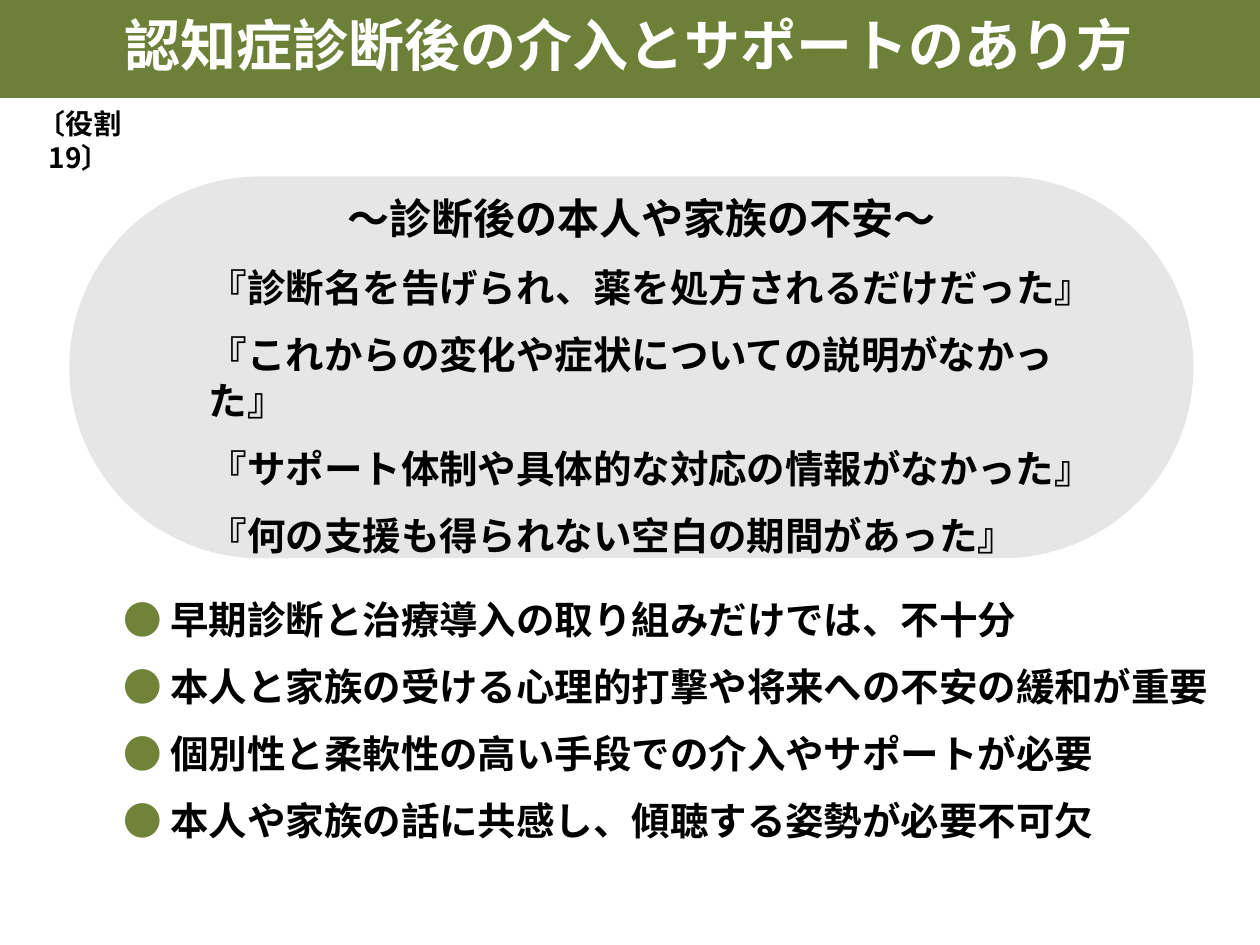
"""Build a slide on support after a dementia diagnosis."""
from dataclasses import dataclass

from lxml import etree
from pptx import Presentation
from pptx import util as u
from pptx.dml import color
from pptx.enum import shapes, text
from pptx.oxml import ns

FACE = "Noto Sans CJK JP"
BLACK, WHITE, GREEN, DOT, GREY = "000000", "FFFFFF", "6D8038", "708339", "E6E6E6"
MID, LEFT = text.PP_ALIGN.CENTER, text.PP_ALIGN.LEFT


@dataclass
class Box:
    """Place and size in points."""
    left: float
    top: float
    width: float
    height: float

    def emu(self) -> list:
        """Give the four lengths in slide units."""
        return [u.Pt(n) for n in (self.left, self.top, self.width, self.height)]


@dataclass
class Line:
    """One paragraph, with an optional coloured lead mark."""
    words: str
    size: float
    tint: str = BLACK
    align: text.PP_ALIGN = LEFT
    before: float = 0
    margin: float = 0
    indent: float = 0
    mark: str = ""


def paint(target, tint: str) -> None:
    """Set a solid colour on a fill or a font."""
    fill = getattr(target, "fill", target)
    fill.solid()
    fill.fore_color.rgb = color.RGBColor.from_string(tint)


def add_panel(slide, kind, box: Box, tint: str):
    """Draw a plain filled shape."""
    panel = slide.shapes.add_shape(kind, *box.emu())
    panel.shadow.inherit = False
    paint(panel, tint)
    panel.line.fill.background()
    return panel


def write(para, line: Line) -> None:
    """Fill one paragraph and set its font and spacing."""
    para.alignment = line.align
    para.space_before = u.Pt(line.before)
    font = para.font
    font.size, font.bold, font.name = u.Pt(line.size), True, FACE
    paint(font, line.tint)
    props = para._p.get_or_add_pPr()
    props.set("marL", str(u.Pt(line.margin)))
    props.set("indent", str(u.Pt(line.indent)))
    latin = props.find(".//" + ns.qn("a:latin"))
    east = etree.Element(ns.qn("a:ea"), typeface=FACE)
    latin.addnext(east)
    if line.mark:
        lead = para.add_run()
        lead.text = line.mark
        paint(lead.font, DOT)
    para.add_run().text = line.words


def add_text(slide, box: Box, lines: list[Line], grow: bool = True) -> None:
    """Add a wrapped text box, growing or centred on its height."""
    frame = slide.shapes.add_textbox(*box.emu()).text_frame
    frame.word_wrap = True
    if grow:
        frame.auto_size = text.MSO_AUTO_SIZE.SHAPE_TO_FIT_TEXT
    else:
        frame.vertical_anchor = text.MSO_ANCHOR.MIDDLE
    for spot, line in enumerate(lines):
        write(frame.add_paragraph() if spot else frame.paragraphs[0], line)


def main() -> None:
    """Build and save the slide."""
    deck = Presentation()
    deck.slide_width, deck.slide_height = u.Pt(720), u.Pt(540)
    slide = deck.slides.add_slide(deck.slide_layouts[6])

    points = [
        "早期診断と治療導入の取り組みだけでは、不十分",
        "本人と家族の受ける心理的打撃や将来への不安の緩和が重要",
        "個別性と柔軟性の高い手段での介入やサポートが必要",
        "本人や家族の話に共感し、傾聴する姿勢が必要不可欠",
    ]
    fears = [
        "『診断名を告げられ、薬を処方されるだけだった』",
        "『これからの変化や症状についての説明がなかった』",
        "『サポート体制や具体的な対応の情報がなかった』",
        "『何の支援も得られない空白の期間があった』",
    ]

    add_panel(slide, shapes.MSO_SHAPE.RECTANGLE, Box(0, 0, 720, 56), GREEN)
    title = Line("認知症診断後の介入とサポートのあり方", 32, WHITE, MID)
    add_text(slide, Box(26.5, 3.5, 666, 43), [title], grow=False)
    add_text(slide, Box(63.4, 337, 656.6, 150.5), [
        Line(point, 22, before=12, margin=35.3, indent=-35.3, mark="● ")
        for point in points])

    pill = add_panel(slide, shapes.MSO_SHAPE.ROUNDED_RECTANGLE,
                     Box(39.6, 100.8, 642.4, 218.2), GREY)
    pill.adjustments[0] = 0.5
    head = Line("～診断後の本人や家族の不安～", 24, align=MID, before=6)
    add_text(slide, Box(90.7, 106.6, 551.5, 191.5), [
        head, *(Line(fear, 22, before=12, margin=21.6) for fear in fears)])
    add_text(slide, Box(0, 57.6, 90.7, 26.6), [Line("〔役割 19〕", 16, align=MID)])
    deck.save("out.pptx")


if __name__ == "__main__":
    main()
